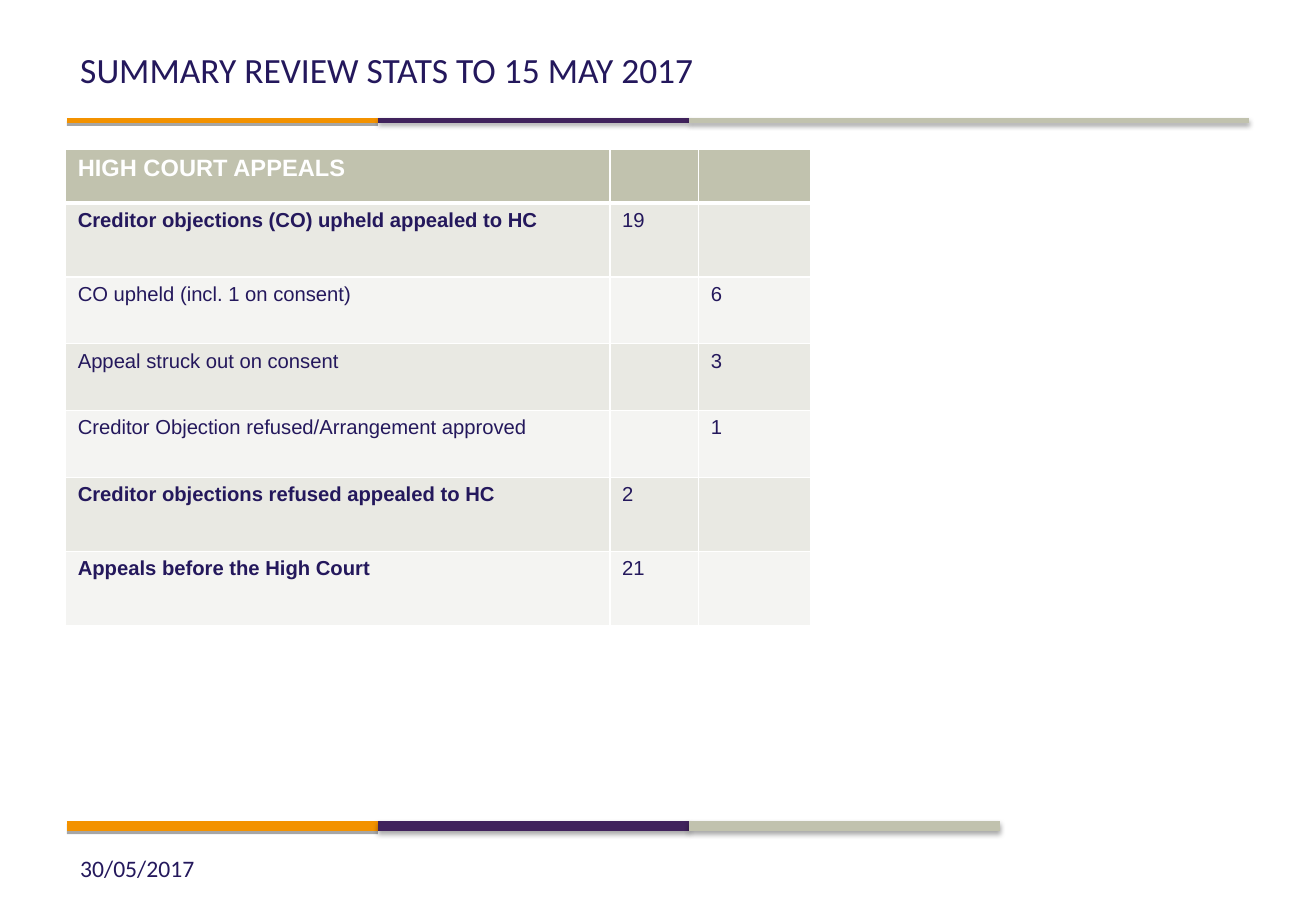
"""Build the summary review statistics slide with its High Court appeals table."""
from lxml import etree
from pptx import Presentation
from pptx.dml.color import RGBColor
from pptx.enum.shapes import MSO_CONNECTOR
from pptx.enum.text import MSO_ANCHOR
from pptx.oxml import parse_xml
from pptx.oxml.ns import nsdecls
from pptx.util import Inches, Pt

COLOURS = {
    "orange": "F39200",
    "purple": "40225C",
    "stone": "C1C2AE",
    "ink": "24185C",
    "white": "FFFFFF",
    "band_dark": "E9E9E3",
    "band_light": "F4F4F2",
    "shadow": "000000",
}


def format_font(font, colour, **values):
    font.color.rgb = RGBColor.from_string(COLOURS[colour])
    for attribute, value in values.items():
        setattr(font, attribute, value)


prs = Presentation()
prs.slide_width, prs.slide_height = Inches(10.83), Inches(7.5)
slide = prs.slides.add_slide(prs.slide_layouts[6])

rules = [(0.99, 3, [0.55, 3.11, 5.67, 10.28]), (6.8, 6, [0.55, 3.11, 5.67, 8.23])]
segments = [("orange", 0), ("purple", 3.1), ("stone", 3.1)]
for y, weight, stops in rules:
    for (colour, blur), start, end in zip(segments, stops, stops[1:]):
        segment = slide.shapes.add_connector(
            MSO_CONNECTOR.STRAIGHT, Inches(start), Inches(y), Inches(end), Inches(y))
        segment.line.color.rgb = RGBColor.from_string(COLOURS[colour])
        segment.line.width = Pt(weight)
        segment._element.spPr.append(parse_xml(
            f'<a:effectLst {nsdecls("a")}><a:outerShdw blurRad="{Pt(blur)}" '
            f'dist="{Pt(1.8)}" dir="5400000" rotWithShape="0">'
            f'<a:srgbClr val="{COLOURS["shadow"]}"><a:alpha val="35000"/></a:srgbClr>'
            '</a:outerShdw></a:effectLst>'))

captions = [
    ("SUMMARY REVIEW STATS TO 15 MAY 2017", 0.3, 9.75, 0.54, 21),
    ("30/05/2017", 6.95, 2.53, 0.4, 14),
]
frame_format = {
    "word_wrap": True,
    "vertical_anchor": MSO_ANCHOR.MIDDLE,
    "margin_left": Inches(0.12),
    "margin_right": Inches(0.12),
    "margin_top": Inches(0.06),
    "margin_bottom": Inches(0.06),
}
for text, top, width, height, size in captions:
    frame = slide.shapes.add_textbox(
        Inches(0.54), Inches(top), Inches(width), Inches(height)).text_frame
    for attribute, value in frame_format.items():
        setattr(frame, attribute, value)
    frame.text = text
    format_font(frame.paragraphs[0].runs[0].font, "ink", name="Calibri", size=Pt(size))

appeals = [
    ("HIGH COURT APPEALS", "", ""),
    ("Creditor objections (CO) upheld appealed to HC", "19", ""),
    ("CO upheld (incl. 1 on consent)", "", "6"),
    ("Appeal struck out on consent", "", "3"),
    ("Creditor Objection refused/Arrangement approved", "", "1"),
    ("Creditor objections refused appealed to HC", "2", ""),
    ("Appeals before the High Court", "21", ""),
]
column_widths = [4.48, 0.73, 0.92]
row_heights = [0.44, 0.61, 0.55, 0.55, 0.55, 0.61, 0.61]
table = slide.shapes.add_table(
    len(appeals), len(column_widths), Inches(0.54), Inches(1.23),
    Inches(6.13), Inches(3.91)).table
table.horz_banding = False
for column, width in zip(table.columns, column_widths):
    column.width = Inches(width)
for row, height in zip(table.rows, row_heights):
    row.height = Inches(height)

for r, entries in enumerate(appeals):
    header = r == 0
    fill = "stone" if header else "band_dark" if r % 2 else "band_light"
    borders = {"lnL": 1, "lnR": 1, "lnT": 3 if r == 1 else 1, "lnB": 3 if header else 1}
    for c, text in enumerate(entries):
        cell = table.cell(r, c)
        cell.fill.solid()
        cell.fill.fore_color.rgb = RGBColor.from_string(COLOURS[fill])
        properties = cell._tc.get_or_add_tcPr()
        for position, (side, weight) in enumerate(borders.items()):
            properties.insert(position, etree.fromstring(
                f'<a:{side} {nsdecls("a")} w="{Pt(weight)}"><a:solidFill>'
                f'<a:srgbClr val="{COLOURS["white"]}"/></a:solidFill></a:{side}>'))
        cell.text = text
        format_font(
            cell.text_frame.paragraphs[0].font, "white" if header else "ink",
            name="Arial", size=Pt(14 if header else 12),
            bold=header or (c == 0 and bool(entries[1])))

prs.save("out.pptx")
